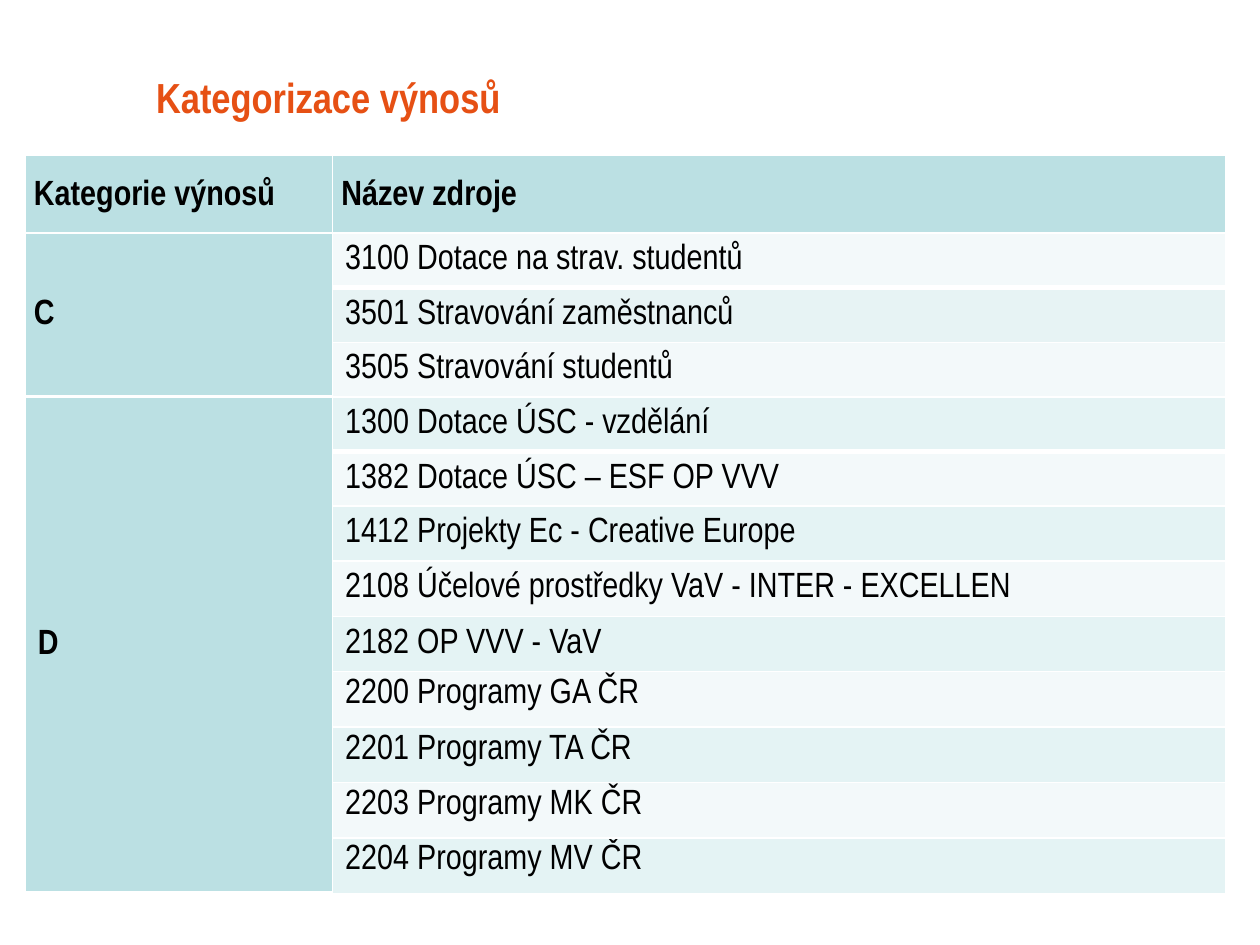
from lxml import etree
from pptx import Presentation
from pptx.dml.color import RGBColor
from pptx.enum import text
from pptx.oxml.ns import qn
from pptx.util import Inches, Pt

FONT = "Arial Narrow"
COLORS = {"title": "E65014", "text": "000000", "head": "BBE0E3", "line": "FFFFFF",
          "pale": "F3F9FA", "mint": "E7F3F4", "aqua": "E4F3F4"}
TITLE = "Kategorizace výnosů"
HEADER = ("Kategorie výnosů", "Název zdroje")
SOURCES_C = ["3100 Dotace na strav. studentů", "3501 Stravování zaměstnanců",
             "3505 Stravování studentů"]
SOURCES_D = ["1300 Dotace ÚSC - vzdělání", "1382 Dotace ÚSC – ESF OP VVV",
             "1412 Projekty Ec - Creative Europe",
             "2108 Účelové prostředky VaV - INTER - EXCELLEN", "2182 OP VVV - VaV",
             "2200 Programy GA ČR", "2201 Programy TA ČR",
             "2203 Programy MK ČR", "2204 Programy MV ČR"]
LEFT, COLS = 0.2, (2.44, 7.09)
TIGHT, NORMAL = (0.07, 0), (0.1, 0.05)
MIDDLE, TOP = text.MSO_ANCHOR.MIDDLE, text.MSO_ANCHOR.TOP


def style(p, size, color, bold):
    for r in p.runs:
        r.font.name, r.font.size, r.font.bold = FONT, Pt(size), bold
        r.font.color.rgb = RGBColor.from_string(COLORS[color])


def add_borders(cell, bottom):
    tc_pr = cell._tc.get_or_add_tcPr()
    for side, width in zip("LRTB", (1, 1, 1, bottom)):
        ln = etree.SubElement(tc_pr, qn(f"a:ln{side}"), w=str(Pt(width)))
        fill = etree.SubElement(ln, qn("a:solidFill"))
        etree.SubElement(fill, qn("a:srgbClr"), val=COLORS["line"])


def fill_cell(cell, label, color, bold=False, margins=NORMAL, anchor=MIDDLE, align=None):
    cell.text_frame.text = label
    cell.margin_left = cell.margin_right = Inches(margins[0])
    cell.margin_top = cell.margin_bottom = Inches(margins[1])
    cell.vertical_anchor = anchor
    p = cell.text_frame.paragraphs[0]
    p.alignment = align
    style(p, 20, "text", bold)
    cell.fill.solid()
    cell.fill.fore_color.rgb = RGBColor.from_string(COLORS[color])


def add_grid(s, top, heights):
    tbl = s.shapes.add_table(len(heights), len(COLS), Inches(LEFT), Inches(top),
                             Inches(sum(COLS)), Inches(sum(heights))).table
    tbl.first_row = tbl.horz_banding = False
    for col, width in zip(tbl.columns, COLS):
        col.width = Inches(width)
    for i, height in enumerate(heights):
        tbl.rows[i].height = Inches(height)
        for cell in tbl.rows[i].cells:
            add_borders(cell, 3 if i == 0 else 1)
    return tbl


def add_category(s, top, heights, name, margins, sources, bands, middle_rows):
    tbl = add_grid(s, top, heights)
    tbl.cell(0, 0).merge(tbl.cell(len(sources) - 1, 0))
    fill_cell(tbl.cell(0, 0), name, "head", True, margins)
    for i, source in enumerate(sources):
        fill_cell(tbl.cell(i, 1), source, bands[i % 2],
                  anchor=MIDDLE if i < middle_rows else TOP)


def main():
    prs = Presentation()
    prs.slide_width, prs.slide_height = Inches(10), Inches(7.5)
    s = prs.slides.add_slide(prs.slide_layouts[6])

    tf = s.shapes.add_textbox(Inches(1.14), Inches(0.36), Inches(8.11), Inches(0.81)).text_frame
    tf.word_wrap = True
    tf.vertical_anchor = MIDDLE
    tf.text = TITLE
    style(tf.paragraphs[0], 24, "title", True)

    header = add_grid(s, 1.23, [0.66])
    for cell, label in zip(header.rows[0].cells, HEADER):
        fill_cell(cell, label, "head", True, TIGHT, align=text.PP_ALIGN.JUSTIFY)

    add_category(s, 1.85, [0.4] * 3, "C", TIGHT, SOURCES_C, ("pale", "mint"), 3)
    add_category(s, 3.15, [0.43] * 3 + [0.44] * 6, "D", NORMAL, SOURCES_D, ("aqua", "pale"), 5)
    prs.save("out.pptx")


if __name__ == "__main__":
    main()
